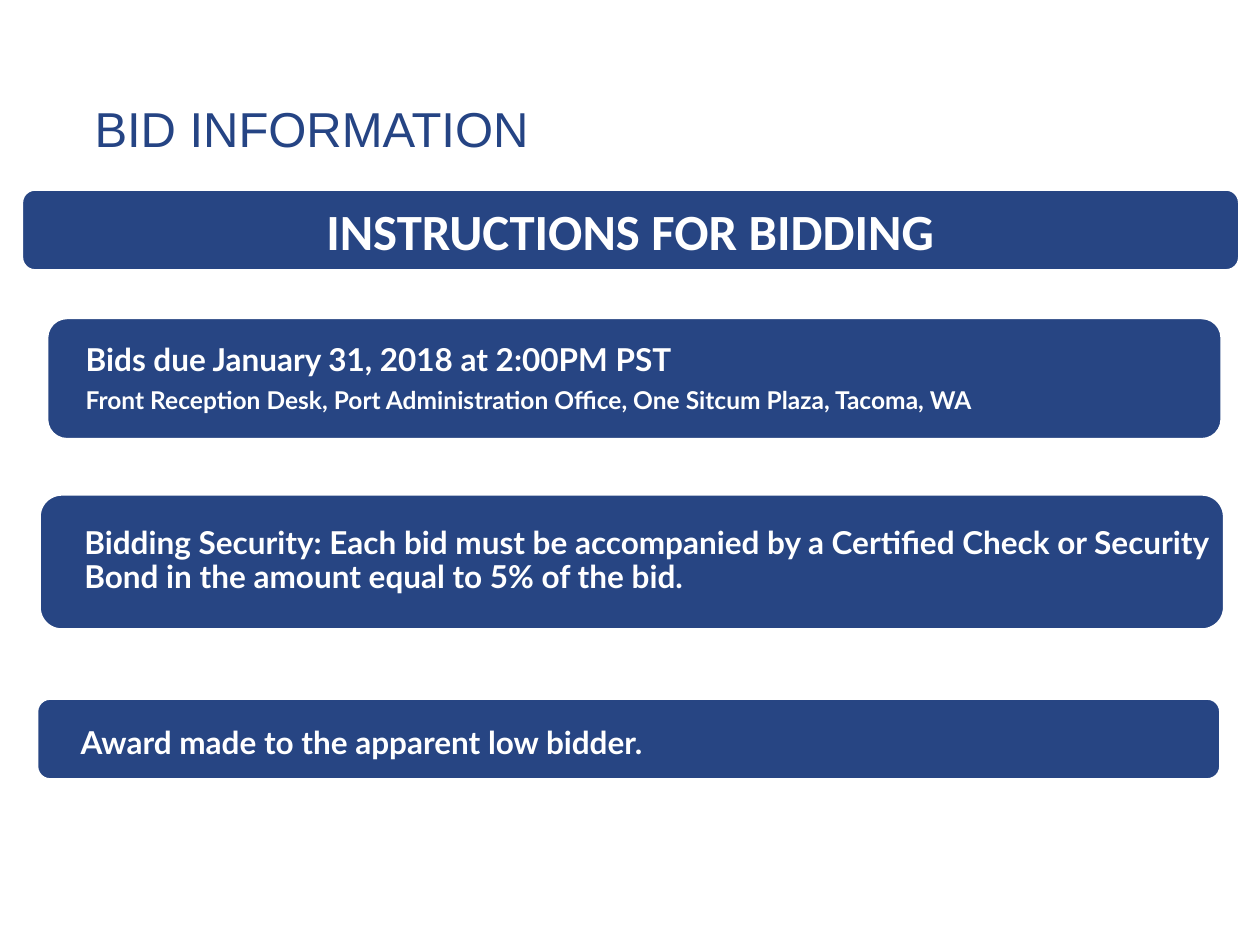
"""Build the bid information slide with its bidding instruction panels."""
from dataclasses import dataclass

from pptx import Presentation
from pptx.dml.color import RGBColor
from pptx.enum.shapes import MSO_SHAPE
from pptx.enum.text import MSO_ANCHOR, MSO_AUTO_SIZE, PP_ALIGN
from pptx.util import Inches, Pt

ROUNDED = MSO_SHAPE.ROUNDED_RECTANGLE
BOTTOM, MIDDLE = MSO_ANCHOR.BOTTOM, MSO_ANCHOR.MIDDLE
LEFT, CENTER = PP_ALIGN.LEFT, PP_ALIGN.CENTER
NO_AUTOSIZE = MSO_AUTO_SIZE.NONE


@dataclass(frozen=True)
class Theme:
    title_color: RGBColor = RGBColor(0x25, 0x44, 0x84)
    panel: RGBColor = RGBColor(0x27, 0x45, 0x83)
    white: RGBColor = RGBColor(0xFF, 0xFF, 0xFF)
    title_size: int = 28
    banner_size: int = 29
    text_size: int = 18
    detail_size: int = 14


theme = Theme()


def add_panel(shapes, box):
    panel = shapes.add_shape(ROUNDED, *map(Inches, box))
    panel.shadow.inherit = False
    panel.fill.solid()
    panel.fill.fore_color.rgb = theme.panel
    panel.line.color.rgb = theme.white
    panel.line.width = Pt(2)
    return panel


def style_text(paragraph, name, size, color, bold):
    for run in paragraph.runs:
        run.font.name = name
        run.font.size = Pt(size)
        run.font.color.rgb = color
        run.font.bold = bold


presentation = Presentation()
presentation.slide_width, presentation.slide_height = Inches(10), Inches(7.5)
slide = presentation.slides.add_slide(presentation.slide_layouts[5])

title = slide.shapes.title
title.left, title.top = Inches(0.75), Inches(0)
title.width, title.height = Inches(6.75), Inches(1.25)
title_frame = title.text_frame
title_frame.text = "BID INFORMATION"
title_frame.word_wrap = True
title_frame.auto_size = NO_AUTOSIZE
title_frame.vertical_anchor = BOTTOM
title_frame.margin_left = title_frame.margin_right = Inches(0)
title_frame.margin_top = title_frame.margin_bottom = Inches(0)
title_paragraph = title_frame.paragraphs[0]
title_paragraph.alignment = LEFT
title_paragraph.line_spacing = Pt(theme.title_size)
style_text(title_paragraph, "Arial", theme.title_size, theme.title_color, False)

banner = add_panel(slide.shapes, (0.17, 1.5, 9.67, 0.65))
banner.text_frame.text = "INSTRUCTIONS FOR BIDDING"
banner.text_frame.vertical_anchor = MIDDLE
banner_paragraph = banner.text_frame.paragraphs[0]
banner_paragraph.alignment = CENTER
style_text(banner_paragraph, "Calibri", theme.banner_size, theme.white, True)

instructions = [
    ((0.37, 2.52, 9.33, 0.97), (0.45, 2.57, 9.59, 0.88), [
        ("Bids due January 31, 2018 at 2:00PM PST", theme.text_size),
        ("Front Reception Desk, Port Administration Office, "
         "One Sitcum Plaza, Tacoma, WA", theme.detail_size),
    ]),
    ((0.31, 3.92, 9.41, 1.08), (0.44, 3.97, 9.6, 0.97), [
        ("Bidding Security: Each bid must be accompanied by a Certified Check "
         "or Security Bond in the amount equal to 5% of the bid.", theme.text_size),
    ]),
    ((0.29, 5.54, 9.4, 0.65), (0.41, 5.71, 9.3, 0.4), [
        ("Award made to the apparent low bidder.", theme.text_size),
    ]),
]

for panel_box, text_box, lines in instructions:
    group = slide.shapes.add_group_shape()
    add_panel(group.shapes, panel_box)
    text_frame = group.shapes.add_textbox(*map(Inches, text_box)).text_frame
    text_frame.word_wrap = True
    text_frame.vertical_anchor = MIDDLE
    text_frame.margin_left = text_frame.margin_right = Inches(0.23)
    text_frame.margin_top = text_frame.margin_bottom = Inches(0)
    text_frame.text = "\n".join(text for text, size in lines)
    for paragraph, (text, size) in zip(text_frame.paragraphs, lines):
        paragraph.alignment = LEFT
        paragraph.line_spacing = 0.9
        paragraph.space_after = Pt(round(size * 0.35))
        style_text(paragraph, "Lato", size, theme.white, True)

presentation.save("out.pptx")
